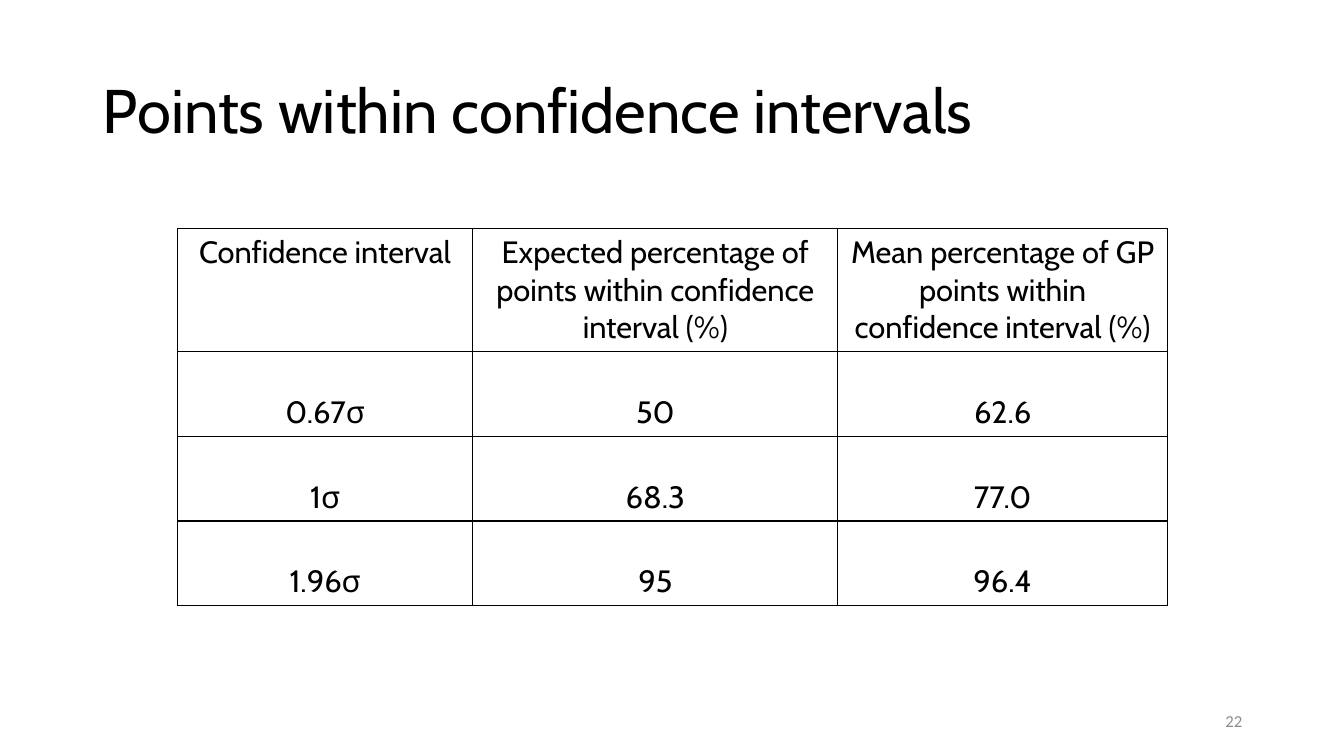
from dataclasses import dataclass

from lxml import etree
from pptx import Presentation
from pptx.dml.color import RGBColor
from pptx.enum.text import MSO_ANCHOR, PP_ALIGN
from pptx.oxml.ns import qn
from pptx.util import Inches, Pt

LEFT, CENTER, RIGHT = PP_ALIGN.LEFT, PP_ALIGN.CENTER, PP_ALIGN.RIGHT
TOP, MIDDLE, BOTTOM = MSO_ANCHOR.TOP, MSO_ANCHOR.MIDDLE, MSO_ANCHOR.BOTTOM

HEADING = "Points within confidence intervals"
PAGE = "22"
INTERVALS = [
    ("Confidence interval",
     "Expected percentage of points within confidence interval (%)",
     "Mean percentage of GP points within confidence interval (%)"),
    ("0.67σ", "50", "62.6"),
    ("1σ", "68.3", "77.0"),
    ("1.96σ", "95", "96.4"),
]


@dataclass(frozen=True)
class Theme:
    ink: str = "000000"
    muted: str = "8C8C8C"
    face: str = "Cabin"
    page_face: str = "Calibri"
    heading_size: int = 44
    table_size: int = 22
    page_size: int = 12
    rule: float = 1


THEME = Theme()
SLIDE = (13.33, 7.5)
HEADING_BOX = (0.92, 0.4, 11.5, 1.45)
PAGE_BOX = (9.42, 6.95, 3, 0.4)
TABLE_ORIGIN = (1.76, 2.27)
COLUMNS = (2.93, 3.62, 3.27)
ROWS = (1.22,) + (0.84,) * (len(INTERVALS) - 1)


def write(frame, text, face, size, color, align):
    frame.word_wrap = True
    frame.text = text
    paragraph = frame.paragraphs[0]
    paragraph.alignment = align
    paragraph.font.name = face
    paragraph.font.size = Pt(size)
    paragraph.font.color.rgb = RGBColor.from_string(color)
    return paragraph


def outline(cell):
    properties = cell._tc.get_or_add_tcPr()
    for position, side in enumerate(("a:lnL", "a:lnR", "a:lnT", "a:lnB")):
        line = etree.Element(qn(side), w=str(Pt(THEME.rule)))
        fill = etree.SubElement(line, qn("a:solidFill"))
        etree.SubElement(fill, qn("a:srgbClr"), val=THEME.ink)
        properties.insert(position, line)


def add_heading(slide):
    title = slide.shapes.title
    title.left, title.top, title.width, title.height = map(Inches, HEADING_BOX)
    paragraph = write(title.text_frame, HEADING, THEME.face,
                      THEME.heading_size, THEME.ink, LEFT)
    paragraph.line_spacing = 0.9
    title.text_frame.vertical_anchor = MIDDLE


def add_intervals(slide):
    box = map(Inches, (*TABLE_ORIGIN, sum(COLUMNS), sum(ROWS)))
    table = slide.shapes.add_table(len(ROWS), len(COLUMNS), *box).table
    table.first_row = table.horz_banding = False
    for column, width in zip(table.columns, COLUMNS):
        column.width = Inches(width)
    for r, (height, values) in enumerate(zip(ROWS, INTERVALS)):
        table.rows[r].height = Inches(height)
        for c, value in enumerate(values):
            cell = table.cell(r, c)
            write(cell.text_frame, value, THEME.face, THEME.table_size,
                  THEME.ink, CENTER)
            cell.vertical_anchor = BOTTOM if r else TOP
            cell.fill.background()
            outline(cell)


def add_page(slide):
    frame = slide.shapes.add_textbox(*map(Inches, PAGE_BOX)).text_frame
    write(frame, PAGE, THEME.page_face, THEME.page_size, THEME.muted, RIGHT)
    frame.vertical_anchor = MIDDLE


def main():
    deck = Presentation()
    deck.slide_width, deck.slide_height = map(Inches, SLIDE)
    slide = deck.slides.add_slide(deck.slide_layouts.get_by_name("Title Only"))
    add_heading(slide)
    add_intervals(slide)
    add_page(slide)
    deck.save("out.pptx")


if __name__ == "__main__":
    main()
